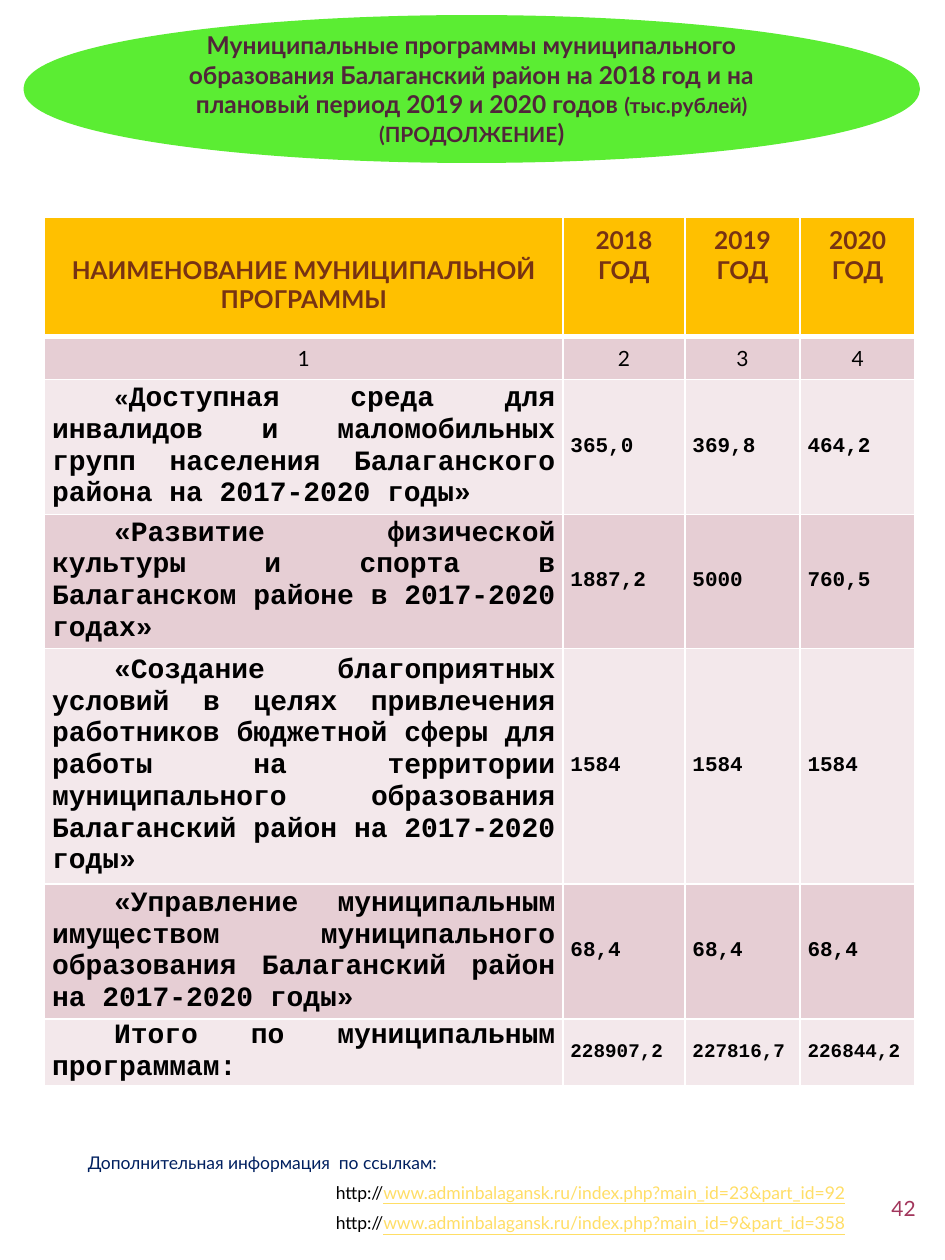
from dataclasses import dataclass

from lxml.etree import SubElement
from pptx import Presentation
from pptx.dml.color import RGBColor
from pptx.enum.shapes import MSO_SHAPE
from pptx.enum.text import MSO_ANCHOR, PP_ALIGN
from pptx.oxml.ns import qn
from pptx.util import Cm, Pt


@dataclass(frozen=True)
class Theme:
    sans: str = "Lato"
    mono: str = "Courier New"
    green: str = "5BED33"
    plum: str = "51253A"
    gold: str = "FFC000"
    brown: str = "773313"
    rose: str = "E6CED4"
    pale: str = "F3E8EB"
    white: str = "FFFFFF"
    black: str = "000000"
    navy: str = "002060"
    link: str = "FFDE66"
    page: str = "A2365C"
    big: int = 16
    head: int = 14
    base: int = 12
    sum: int = 11
    note: int = 10


T = Theme()
WIDTHS = (10.45, 2.46, 2.32, 2.32)
HEIGHTS = (2.41, 0.84, 2.72, 2.7, 4.75, 2.72, 1.35)
HEADS = ("НАИМЕНОВАНИЕ МУНИЦИПАЛЬНОЙ ПРОГРАММЫ", "2018\nГОД", "2019 ГОД", "2020 ГОД")
ROWS = (
    ("«Доступная среда для инвалидов и маломобильных групп населения "
     "Балаганского района на 2017-2020 годы»", "365,0", "369,8", "464,2"),
    ("«Развитие физической культуры и спорта в Балаганском районе "
     "в 2017-2020 годах»", "1887,2", "5000", "760,5"),
    ("«Создание благоприятных условий в целях привлечения работников "
     "бюджетной сферы для работы на территории муниципального образования "
     "Балаганский район на 2017-2020 годы»", "1584", "1584", "1584"),
    ("«Управление муниципальным имуществом муниципального образования "
     "Балаганский район на 2017-2020 годы»", "68,4", "68,4", "68,4"),
    ("Итого по муниципальным программам:", "228907,2", "227816,7", "226844,2"),
)
SITE = "www.adminbalagansk.ru/index.php?main_id="


def style(run, size, color, face=T.sans, bold=False, line=False):
    font = run.font
    font.size, font.name, font.bold = Pt(size), face, bold
    font.color.rgb = RGBColor.from_string(color)
    if line:
        font.underline = True


def extend(par, text):
    run = par.add_run()
    run.text = text
    return run


def paint(fill, color):
    fill.solid()
    fill.fore_color.rgb = RGBColor.from_string(color)


def edge(cell, low):
    """White cell borders; low is the width of the bottom one."""
    props = cell._tc.get_or_add_tcPr()
    for tag, width in (("lnL", 1), ("lnR", 1), ("lnT", 1), ("lnB", low)):
        line = SubElement(props, qn("a:" + tag), w=str(Pt(width)))
        SubElement(SubElement(line, qn("a:solidFill")), qn("a:srgbClr"), val=T.white)


def put(cell, text, color, align, size, ink=T.black, face=T.sans, bold=True, low=1):
    edge(cell, low)
    paint(cell.fill, color)
    cell.text_frame.text = text
    for par in cell.text_frame.paragraphs:
        par.alignment = align
        for run in par.runs:
            style(run, size, ink, face, bold)


def inset(cell, side, top):
    cell.margin_left = cell.margin_right = Cm(side)
    cell.margin_top = cell.margin_bottom = Cm(top)


def title(slide, x, y, w, h):
    oval = slide.shapes.add_shape(MSO_SHAPE.OVAL, Cm(x), Cm(y), Cm(w), Cm(h))
    oval.shadow.inherit = False
    paint(oval.fill, T.green)
    paint(oval.line.fill, T.green)
    oval.line.width = Pt(6)
    frame = oval.text_frame
    frame.word_wrap = True
    frame.vertical_anchor = MSO_ANCHOR.MIDDLE
    frame.text = ("Муниципальные программы муниципального образования Балаганский "
                  "район на 2018 год и на плановый период 2019 и 2020 годов ")
    par = frame.paragraphs[0]
    par.alignment = PP_ALIGN.CENTER
    extend(par, "(тыс.рублей)(ПРОДОЛЖЕНИЕ")
    extend(par, ")")
    for run, size in zip(par.runs, (T.head, T.base, T.head)):
        style(run, size, T.plum, bold=True)


def budget(slide, x, y):
    table = slide.shapes.add_table(
        len(HEIGHTS), len(WIDTHS), Cm(x), Cm(y), Cm(sum(WIDTHS)), Cm(sum(HEIGHTS))).table
    table.horz_banding = False
    for col, width in zip(table.columns, WIDTHS):
        col.width = Cm(width)
    for row, height in zip(table.rows, HEIGHTS):
        row.height = Cm(height)

    # Headings and column numbers
    for c, text in enumerate(HEADS):
        top, mark = table.cell(0, c), table.cell(1, c)
        put(top, text, T.gold, PP_ALIGN.CENTER, T.head, T.brown, low=3)
        put(mark, str(c + 1), T.rose, PP_ALIGN.CENTER, T.base, bold=False)
        inset(top, 0.18, 0.18)
        inset(mark, 0.18, 0.18)
    table.cell(0, 0).margin_top = Cm(0.77)

    # Programmes and total
    for r, row in enumerate(ROWS, 2):
        color = T.rose if r % 2 else T.pale
        small = T.sum if row == ROWS[-1] else T.base
        for c, text in enumerate(row):
            cell = table.cell(r, c)
            put(cell, text, color, PP_ALIGN.JUSTIFY, small if c else T.big, face=T.mono)
            inset(cell, 0.15, 0)
            cell.vertical_anchor = MSO_ANCHOR.MIDDLE
        name = table.cell(r, 0).text_frame.paragraphs[0]
        name._p.get_or_add_pPr().set("indent", str(Cm(1.25)))
    # The first opening quote is smaller
    par = table.cell(2, 0).text_frame.paragraphs[0]
    par.text = "«"
    style(par.runs[0], T.head, T.black, T.mono, True)
    style(extend(par, ROWS[0][0][1:]), T.big, T.black, T.mono, True)


def label(slide, x, y, w, h, text, size, color):
    frame = slide.shapes.add_textbox(Cm(x), Cm(y), Cm(w), Cm(h)).text_frame
    frame.word_wrap = True
    frame.text = text
    par = frame.paragraphs[0]
    style(par.runs[0], size, color)
    return par


def footer(slide, x, y):
    label(slide, x, y, 9.53, 0.69, "Дополнительная информация  по ссылкам:", T.note, T.navy)
    for n, tail in enumerate(("23&part_id=92", "9&part_id=358"), 1):
        par = label(slide, x + 5, y + 0.61 * n, 11.2, 0.69, "http://", T.note, T.black)
        style(extend(par, SITE + tail), T.note, T.link, line=True)
    page = label(slide, x + 15.62, y + 0.89, 1.57, 0.91, "42", T.base, T.page)
    page.alignment = PP_ALIGN.RIGHT


def main():
    deck = Presentation()
    deck.slide_width, deck.slide_height = Cm(19.05), Cm(25.4)
    slide = deck.slides.add_slide(deck.slide_layouts[6])
    title(slide, 0.58, 0.41, 17.86, 2.77)
    budget(slide, 0.9, 4.37)
    footer(slide, 1.52, 23.09)
    deck.save("out.pptx")


if __name__ == "__main__":
    main()
